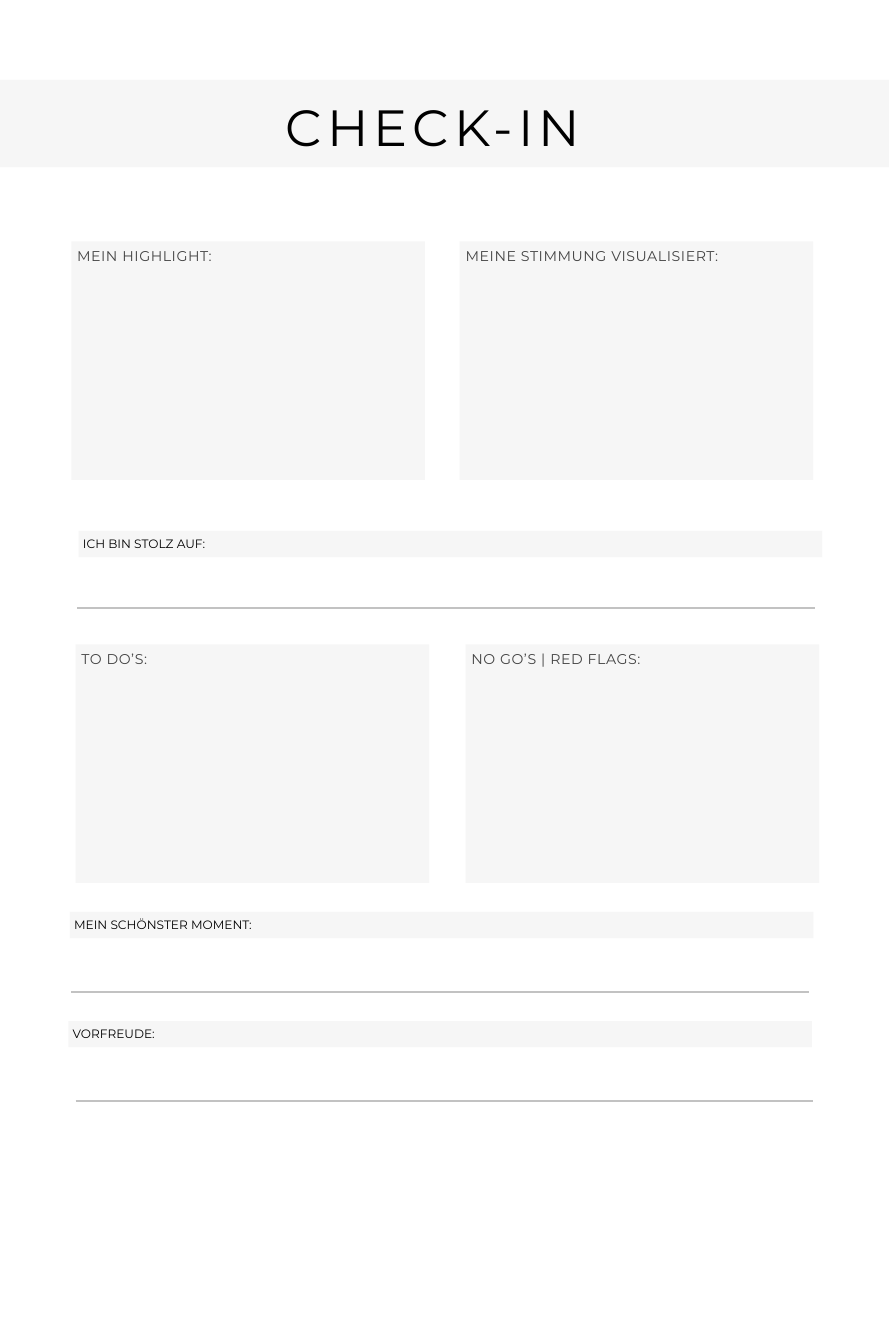
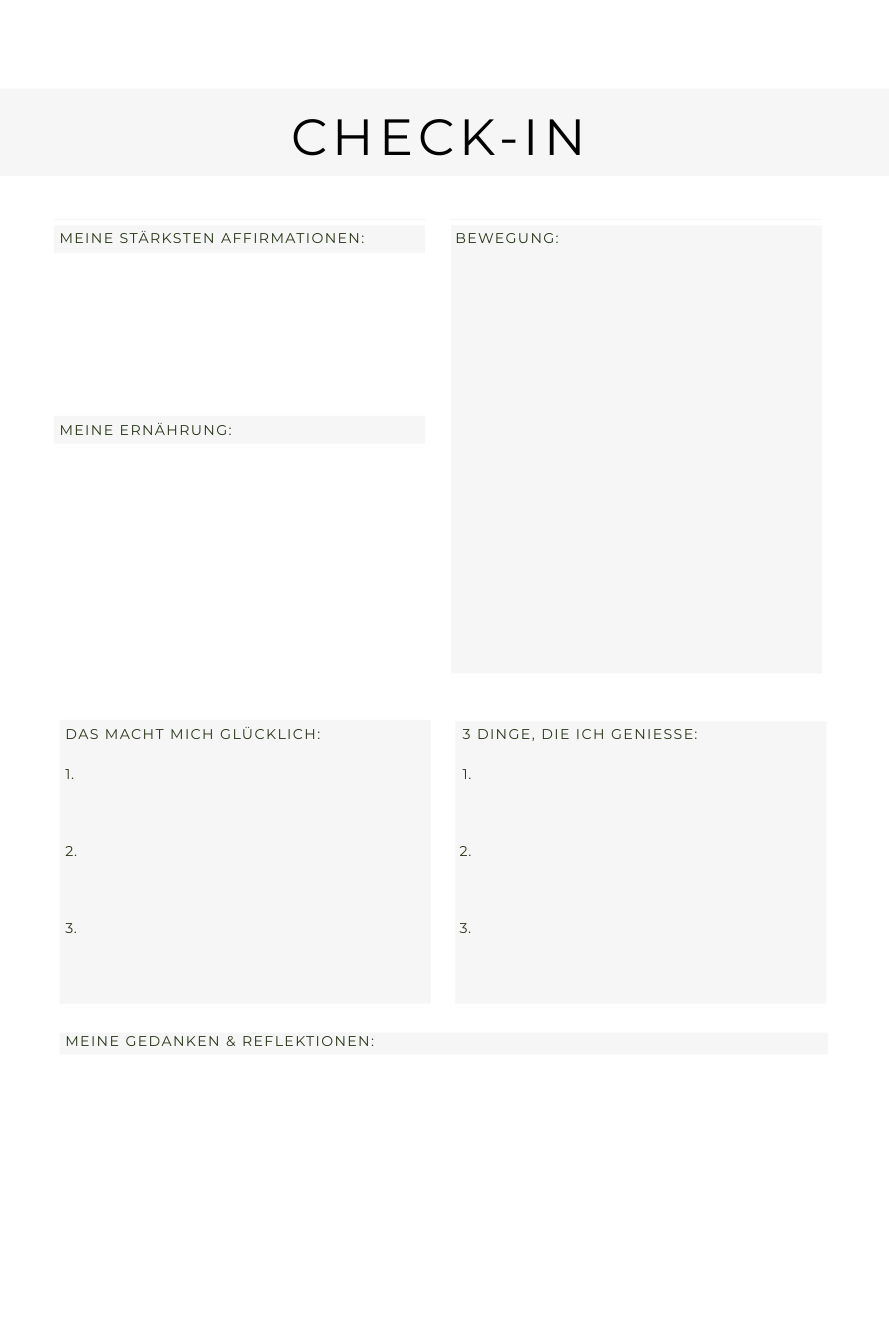
from lxml import etree
from pptx import Presentation
from pptx.dml.color import RGBColor
from pptx.enum.shapes import MSO_CONNECTOR, MSO_SHAPE
from pptx.enum.text import MSO_AUTO_SIZE, PP_ALIGN
from pptx.oxml.ns import qn
from pptx.util import Inches, Pt

RECTANGLE = MSO_SHAPE.RECTANGLE
STRAIGHT = MSO_CONNECTOR.STRAIGHT
FIT_TEXT = MSO_AUTO_SIZE.SHAPE_TO_FIT_TEXT
LEFT, CENTER = PP_ALIGN.LEFT, PP_ALIGN.CENTER

PAGE_WIDTH, PAGE_HEIGHT = 6.11, 9.24
FONT = "Montserrat"
PANEL, RULE, BLACK, GREY, OLIVE = "F6F6F6", "C2C2C2", "000000", "444444", "283618"

GREY_LABEL = {"color": GREY, "spacing": 0.3}
BAR_LABEL = {"size": 6, "leading": 7}
OLIVE_LABEL = {"color": OLIVE, "spacing": 0.7}
NUMBER_LABEL = {"color": OLIVE, "spacing": 0.3}


def rgb(value):
    """Turn a hex string into a colour."""
    return RGBColor.from_string(value)


def add_text(page, text, left, top, width, size=7, leading=8.4,
             color=BLACK, spacing=0, align=LEFT):
    """Add one line of text in a box without margins."""
    box = page.shapes.add_textbox(Inches(left), Inches(top), Inches(width), Pt(leading))
    frame = box.text_frame
    frame.word_wrap = True
    frame.auto_size = FIT_TEXT
    frame.margin_left = frame.margin_right = frame.margin_top = frame.margin_bottom = 0
    para = frame.paragraphs[0]
    para.alignment = align
    para.line_spacing = Pt(leading)
    span = para.add_run()
    span.text = text
    span.font.name = FONT
    span.font.size = Pt(size)
    span.font.color.rgb = rgb(color)
    if spacing:
        span._r.get_or_add_rPr().set("spc", str(round(spacing * 100)))


def add_panel(page, left, top, width, height):
    """Add a plain light rectangle."""
    panel = page.shapes.add_shape(
        RECTANGLE, Inches(left), Inches(top), Inches(width), Inches(height))
    panel.shadow.inherit = False
    panel.fill.solid()
    panel.fill.fore_color.rgb = rgb(PANEL)
    panel.line.fill.background()


def add_field(page, text, left, top, width, height, inset=(0.04, 0.04),
              label_width=2.56, **label):
    """Add a panel with its label in the top left corner."""
    add_panel(page, left, top, width, height)
    add_text(page, text, left + inset[0], top + inset[1], label_width, **label)


def add_rule(page, left, top, width, color=RULE):
    """Add a thin horizontal line."""
    rule = page.shapes.add_connector(
        STRAIGHT, Inches(left), Inches(top), Inches(left + width), Inches(top))
    rule.line.color.rgb = rgb(color)
    rule.line.width = Pt(0.75)
    etree.SubElement(rule._element.spPr, qn("a:effectLst"))


def add_page(deck, band_top, title_left):
    """Add a blank page with the title band."""
    page = deck.slides.add_slide(deck.slide_layouts[6])
    add_panel(page, 0, band_top, PAGE_WIDTH, 0.6)
    add_text(page, "CHECK-IN", title_left, band_top + 0.04, 4.85,
             size=25.2, leading=35.3, spacing=2.5, align=CENTER)
    return page


def build_mood_page(deck):
    """Build the page on highlights, tasks and joys."""
    page = add_page(deck, 0.55, 0.55)
    for text, left, top in (
        ("MEIN HIGHLIGHT:", 0.49, 1.66),
        ("MEINE STIMMUNG VISUALISIERT:", 3.16, 1.66),
        ("TO DO’S:", 0.52, 4.43),
        ("NO GO’S | RED FLAGS:", 3.2, 4.43),
    ):
        add_field(page, text, left, top, 2.43, 1.64, label_width=2.41, **GREY_LABEL)
    for text, left, top, rule_left, rule_top in (
        ("ICH BIN STOLZ AUF:", 0.54, 3.65, 0.53, 4.18),
        ("MEIN SCHÖNSTER MOMENT:", 0.48, 6.27, 0.49, 6.82),
        ("VORFREUDE:", 0.47, 7.02, 0.52, 7.57),
    ):
        add_field(page, text, left, top, 5.11, 0.18, inset=(0.03, 0.04),
                  label_width=2.7, **BAR_LABEL)
        add_rule(page, rule_left, rule_top, 5.07)


def build_reflection_page(deck):
    """Build the page on affirmations, habits and thoughts."""
    page = add_page(deck, 0.61, 0.59)
    for left in (0.37, 3.09):
        add_rule(page, left, 1.51, 2.56, color=PANEL)
    for text, left, top, width, height, inset in (
        ("MEINE STÄRKSTEN AFFIRMATIONEN:", 0.37, 1.55, 2.55, 0.19, (0.04, 0.03)),
        ("MEINE ERNÄHRUNG:", 0.37, 2.86, 2.55, 0.19, (0.04, 0.04)),
        ("BEWEGUNG:", 3.1, 1.55, 2.55, 3.08, (0.03, 0.03)),
        ("DAS MACHT MICH GLÜCKLICH:", 0.41, 4.95, 2.55, 1.95, (0.04, 0.04)),
        ("3 DINGE, DIE ICH GENIESSE:", 3.13, 4.96, 2.55, 1.94, (0.05, 0.03)),
        ("MEINE GEDANKEN & REFLEKTIONEN:", 0.41, 7.1, 5.28, 0.15, (0.04, 0)),
    ):
        add_field(page, text, left, top, width, height, inset, **OLIVE_LABEL)
    for row, lefts in enumerate(((0.45, 3.18), (0.45, 3.16), (0.45, 3.16))):
        for left in lefts:
            add_text(page, f"{row + 1}.", left, 5.26 + row * 0.53, 0.27, **NUMBER_LABEL)


def main():
    """Build and save the deck."""
    deck = Presentation()
    deck.slide_width = Inches(PAGE_WIDTH)
    deck.slide_height = Inches(PAGE_HEIGHT)
    build_mood_page(deck)
    build_reflection_page(deck)
    deck.save("out.pptx")


if __name__ == "__main__":
    main()
